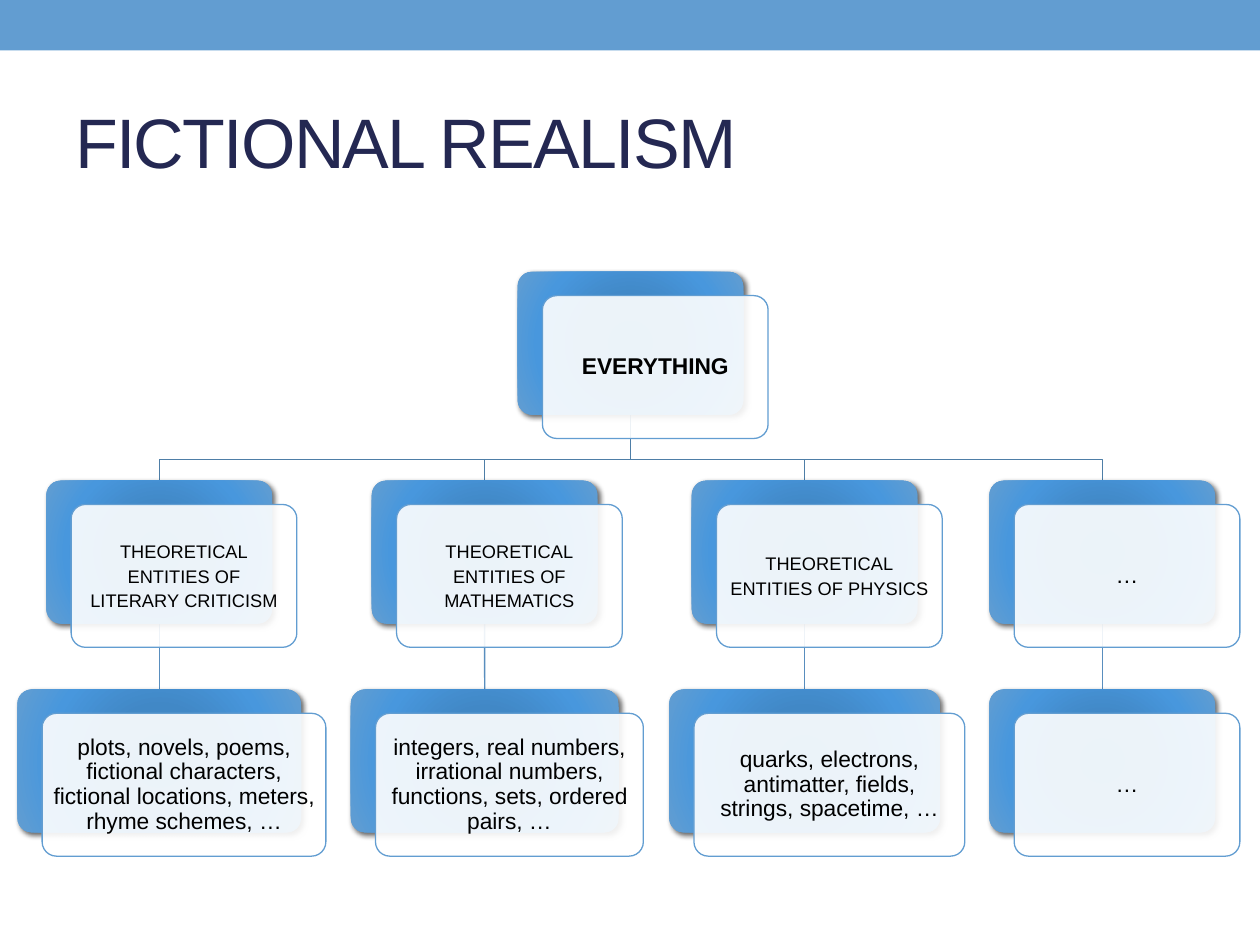
from pptx import Presentation
from pptx.dml.color import RGBColor
from pptx.enum.shapes import MSO_CONNECTOR as Connector, MSO_SHAPE as Shape
from pptx.enum.text import MSO_ANCHOR as Anchor, PP_ALIGN as Align
from pptx.oxml import parse_xml
from pptx.oxml.ns import nsdecls, qn
from pptx.util import Cm, Pt
from lxml.etree import SubElement

COLORS = {
    "bar": "629DD1",
    "title": "242852",
    "text": "000000",
    "card": "FFFFFF",
    "branch": "4E7EA7",
    "stem": "598EBE",
    "shadow": "000000",
}
GRADIENT = [(0, "3C88CB"), (34, "4188C6"), (70, "4897DD"), (100, "629DD1")]

# Tree geometry in centimetres
NODE_W, NODE_H = 4.55, 2.88
SHIFT_X, SHIFT_Y = 0.5, 0.48
FIRST_ROW, ROW_STEP = 5.48, 4.21
ROOT_X, BRANCH_Y = 12.71, 9.27

# Centre, category, examples, width of the examples box
COLUMNS = [
    (3.21, "theoretical entities of literary criticism",
     "plots, novels, poems, fictional characters, fictional locations, "
     "meters, rhyme schemes, …", 5.72),
    (9.77, "theoretical entities of mathematics",
     "integers, real numbers, irrational numbers, functions, sets, "
     "ordered pairs, …", 5.4),
    (16.22, "theoretical entities of physics",
     "quarks, electrons, antimatter, fields, strings, spacetime, …", 5.46),
    (22.22, "…", "…", NODE_W),
]


def color(name):
    return RGBColor.from_string(COLORS[name])


def row_top(row):
    return FIRST_ROW + row * ROW_STEP


def style_font(font, size, name):
    font.name = "Arial"
    font.size = Pt(size)
    font.color.rgb = color(name)


def add_bar(page):
    bar = page.shapes.add_shape(Shape.RECTANGLE, 0, 0, Cm(25.4), Cm(1.02))
    bar.shadow.inherit = False
    bar.fill.solid()
    bar.fill.fore_color.rgb = color("bar")
    bar.line.fill.background()


def add_title(page, text):
    box = page.shapes.add_textbox(Cm(1.27), Cm(1.47), Cm(22.86), Cm(2.74))
    frame = box.text_frame
    frame.word_wrap = True
    frame.vertical_anchor = Anchor.MIDDLE
    para = frame.paragraphs[0]
    span = para.add_run()
    span.text = text
    style_font(para.font, 40, "title")
    span._r.get_or_add_rPr().set("spc", "-100")


def add_branch(page, center):
    """Bent line from the root down to a category."""
    start = (Cm(ROOT_X), Cm(row_top(0) + NODE_H))
    bends = [(ROOT_X, BRANCH_Y), (center, BRANCH_Y), (center, row_top(1))]
    builder = page.shapes.build_freeform(*start)
    builder.add_line_segments([(Cm(x), Cm(y)) for x, y in bends], close=False)
    branch = builder.convert_to_shape()
    branch.shadow.inherit = False
    branch.fill.background()
    branch.line.color.rgb = color("branch")
    branch.line.width = Pt(0.75)


def add_stem(page, center):
    """Straight line from a category to its examples."""
    stem = page.shapes.add_connector(
        Connector.STRAIGHT, Cm(center), Cm(row_top(1) + NODE_H),
        Cm(center), Cm(row_top(2)))
    stem.line.color.rgb = color("stem")
    stem.line.width = Pt(0.75)
    SubElement(stem._element.spPr, qn("a:effectLst"))
    return stem


def add_rounded(page, left, top, width):
    box = page.shapes.add_shape(
        Shape.ROUNDED_RECTANGLE, Cm(left), Cm(top), Cm(width), Cm(NODE_H))
    box.adjustments[0] = 0.1
    box.shadow.inherit = False
    return box


def add_backing(page, left, top, width):
    """Rounded box with a radial gradient and a soft shadow."""
    box = add_rounded(page, left, top, width)
    box.line.fill.background()
    stops = "".join(
        f'<a:gs pos="{pos * 1000}"><a:srgbClr val="{rgb}"/></a:gs>'
        for pos, rgb in GRADIENT)
    sides = " ".join(f'{side}="100000"' for side in "ltrb")
    properties = box._element.spPr
    properties.find(qn("a:prstGeom")).addnext(parse_xml(
        f'<a:gradFill {nsdecls("a")} rotWithShape="1"><a:gsLst>{stops}</a:gsLst>'
        f'<a:path path="circle"><a:fillToRect {sides}/></a:path></a:gradFill>'))
    properties.find(qn("a:effectLst")).append(parse_xml(
        f'<a:outerShdw {nsdecls("a")} blurRad="{Pt(3)}" dist="{Pt(2)}" '
        f'dir="2700000" rotWithShape="0"><a:srgbClr val="{COLORS["shadow"]}">'
        '<a:alpha val="60000"/></a:srgbClr></a:outerShdw>'))
    return box


def add_card(page, left, top, width, text, bold, small_caps):
    """Translucent white card that carries the text."""
    card = add_rounded(page, left, top, width)
    card.fill.solid()
    card.fill.fore_color.rgb = color("card")
    tint = card._element.spPr.find(qn("a:solidFill"))[0]
    SubElement(tint, qn("a:alpha"), val="90000")
    card.line.color.rgb = color("bar")
    card.line.width = Pt(0.75)

    frame = card.text_frame
    frame.word_wrap = True
    frame.vertical_anchor = Anchor.MIDDLE
    frame.margin_left = frame.margin_right = Cm(0.13)
    frame.margin_top = frame.margin_bottom = Cm(0.13)
    para = frame.paragraphs[0]
    para.alignment = Align.CENTER
    para.line_spacing = 0.9
    span = para.add_run()
    span.text = text
    style_font(para.font, 13, "text")
    para.font.bold = bold
    if small_caps:
        span._r.get_or_add_rPr().set("cap", "small")


def add_node(page, center, row, text, width=NODE_W, bold=False, small_caps=False):
    left, top = center - width / 2, row_top(row)
    backing = add_backing(page, left, top, width)
    add_card(page, left + SHIFT_X, top + SHIFT_Y, width, text, bold, small_caps)
    return backing


def main():
    deck = Presentation()
    deck.slide_width, deck.slide_height = Cm(25.4), Cm(19.05)
    page = deck.slides.add_slide(deck.slide_layouts[6])

    # Header
    add_bar(page)
    add_title(page, "FICTIONAL REALISM")

    # Lines lie behind the nodes
    stems = []
    for center, *_ in COLUMNS:
        stems.append(add_stem(page, center))
        add_branch(page, center)

    # Nodes, joined by the stems
    add_node(page, ROOT_X, 0, "EVERYTHING", bold=True)
    for stem, (center, category, examples, width) in zip(stems, COLUMNS):
        upper = add_node(page, center, 1, category, small_caps=category != "…")
        lower = add_node(page, center, 2, examples, width)
        stem.begin_connect(upper, 2)
        stem.end_connect(lower, 0)

    deck.save("out.pptx")


if __name__ == "__main__":
    main()
